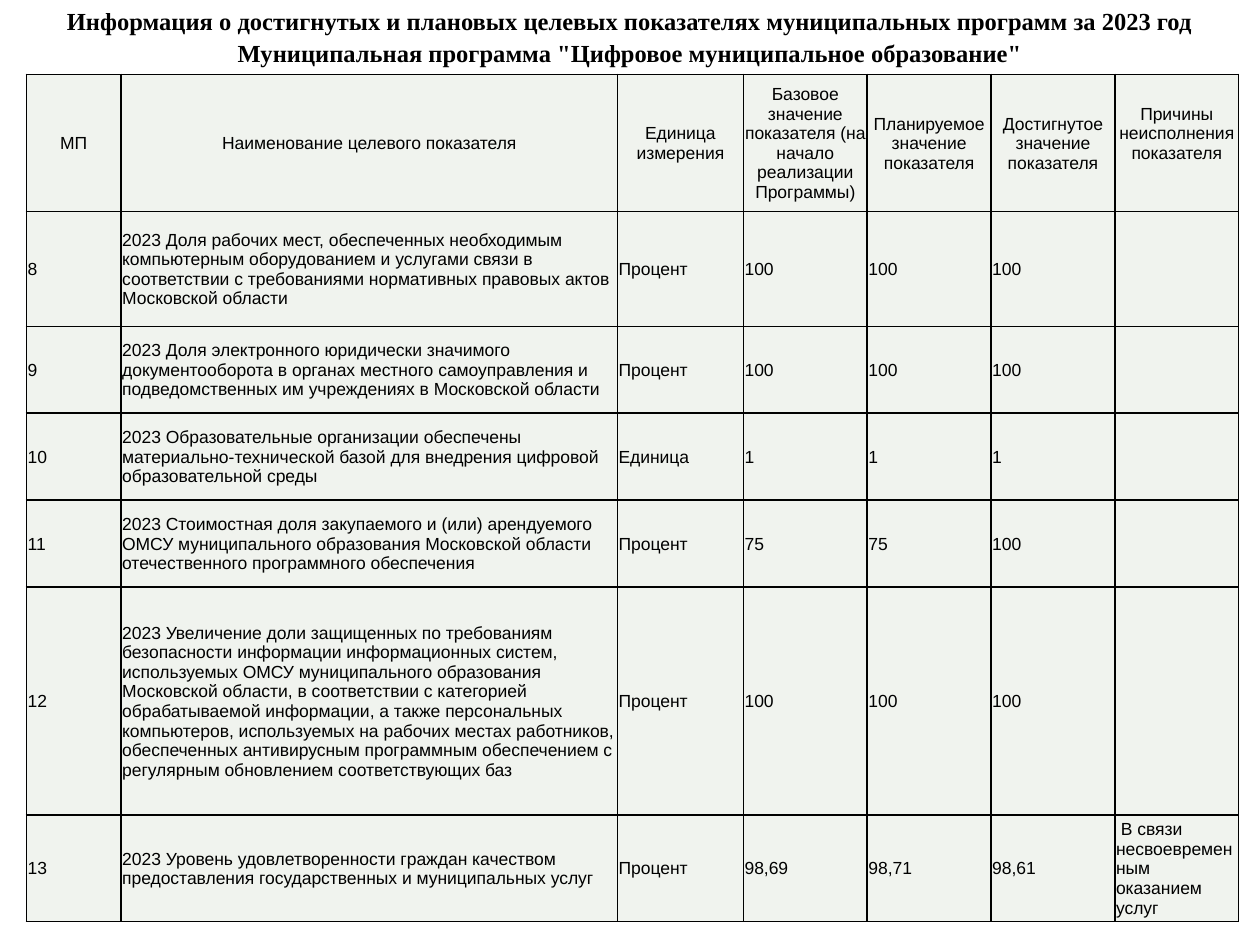
from dataclasses import dataclass

import lxml.etree
import pptx
import pptx.dml.color
import pptx.enum.text
import pptx.oxml.ns
import pptx.util


@dataclass(frozen=True)
class Theme:
    ink: str = "000000"
    cell: str = "F0F3EE"
    title_font: str = "Times New Roman"
    table_font: str = "Arial"
    title_size: int = 14
    table_size: int = 10
    border: int = 1
    cell_inset: float = 0.01


class SlideBuilder:
    COLUMNS, ROWS = 100, 75

    def __init__(self, deck, theme):
        self.theme = theme
        self.width, self.height = deck.slide_width, deck.slide_height
        self.slide = deck.slides.add_slide(deck.slide_layouts[6])

    def x(self, columns):
        return round(self.width * columns / self.COLUMNS)

    def y(self, rows):
        return round(self.height * rows / self.ROWS)

    def set_text(self, paragraph, text, font, size, bold=False, centred=False):
        align = pptx.enum.text.PP_ALIGN
        paragraph.text = text
        paragraph.alignment = align.CENTER if centred else align.LEFT
        paragraph.font.name = font
        paragraph.font.size = pptx.util.Pt(size)
        paragraph.font.bold = bold
        paragraph.font.color.rgb = pptx.dml.color.RGBColor.from_string(self.theme.ink)

    def title(self, text, top):
        box = self.slide.shapes.add_textbox(0, self.y(top), self.width, self.y(3.4))
        frame = box.text_frame
        frame.word_wrap = True
        frame.auto_size = pptx.enum.text.MSO_AUTO_SIZE.SHAPE_TO_FIT_TEXT
        self.set_text(frame.paragraphs[0], text, self.theme.title_font,
                      self.theme.title_size, bold=True, centred=True)

    def outline(self, cell):
        properties = cell._tc.get_or_add_tcPr()
        qn = pptx.oxml.ns.qn
        for position, side in enumerate(("a:lnL", "a:lnR", "a:lnT", "a:lnB")):
            line = lxml.etree.Element(qn(side), w=str(pptx.util.Pt(self.theme.border)))
            fill = lxml.etree.SubElement(line, qn("a:solidFill"))
            lxml.etree.SubElement(fill, qn("a:srgbClr"), val=self.theme.ink)
            properties.insert(position, line)

    def fill_cell(self, cell, text, centred):
        inset = pptx.util.Inches(self.theme.cell_inset)
        cell.margin_left = cell.margin_right = cell.margin_top = inset
        cell.margin_bottom = 0
        cell.vertical_anchor = pptx.enum.text.MSO_ANCHOR.MIDDLE
        cell.fill.solid()
        cell.fill.fore_color.rgb = pptx.dml.color.RGBColor.from_string(self.theme.cell)
        self.outline(cell)
        self.set_text(cell.text_frame.paragraphs[0], text, self.theme.table_font,
                      self.theme.table_size, centred=centred)

    def table(self, records, left, top, widths, heights):
        table = self.slide.shapes.add_table(
            len(records), len(widths), self.x(left), self.y(top),
            self.x(sum(widths)), self.y(sum(heights))).table
        table.first_row = table.horz_banding = False
        for column, width in zip(table.columns, widths):
            column.width = self.x(width)
        for row, height in zip(table.rows, heights):
            row.height = self.y(height)
        for index, record in enumerate(records):
            for cell, text in zip(table.rows[index].cells, record):
                self.fill_cell(cell, text, centred=index == 0)


HEADINGS = (
    "МП", "Наименование целевого показателя", "Единица измерения",
    "Базовое значение показателя (на начало реализации Программы)",
    "Планируемое значение показателя", "Достигнутое значение показателя",
    "Причины неисполнения показателя\n",
)
INDICATORS = (
    ("8", "2023 Доля рабочих мест, обеспеченных необходимым компьютерным оборудованием "
     "и услугами связи в соответствии с требованиями нормативных правовых актов "
     "Московской области", "Процент", "100", "100", "100", ""),
    ("9", "2023 Доля электронного юридически значимого документооборота в органах "
     "местного самоуправления и подведомственных им учреждениях в Московской области",
     "Процент", "100", "100", "100", ""),
    ("10", "2023 Образовательные организации обеспечены материально-технической базой "
     "для внедрения цифровой образовательной среды", "Единица", "1", "1", "1", ""),
    ("11", "2023 Стоимостная доля закупаемого и (или) арендуемого ОМСУ муниципального "
     "образования Московской области отечественного программного обеспечения",
     "Процент", "75", "75", "100", ""),
    ("12", "2023 Увеличение доли защищенных по требованиям безопасности информации "
     "информационных систем, используемых ОМСУ муниципального образования Московской "
     "области, в соответствии с категорией обрабатываемой информации, а также "
     "персональных компьютеров, используемых на рабочих местах работников, "
     "обеспеченных антивирусным программным обеспечением с регулярным обновлением "
     "соответствующих баз", "Процент", "100", "100", "100", ""),
    ("13", "2023 Уровень удовлетворенности граждан качеством предоставления "
     "государственных и муниципальных услуг", "Процент", "98,69", "98,71", "98,61",
     " В связи несвоевременным оказанием услуг"),
)


def main():
    deck = pptx.Presentation()
    deck.slide_width = pptx.util.Inches(10)
    deck.slide_height = pptx.util.Inches(7.5)
    report = SlideBuilder(deck, Theme())
    report.title("Информация о достигнутых и плановых целевых показателях "
                 "муниципальных программ за 2023 год", top=0)
    report.title('Муниципальная программа "Цифровое муниципальное образование"', top=2.5)
    report.table((HEADINGS, *INDICATORS), left=2.1, top=5.9,
                 widths=(7.5, 39.4, 10, *[9.83] * 4),
                 heights=(10.9, 9.1, *[6.9] * 3, 18.1, 8.4))
    deck.save("out.pptx")


if __name__ == "__main__":
    main()
